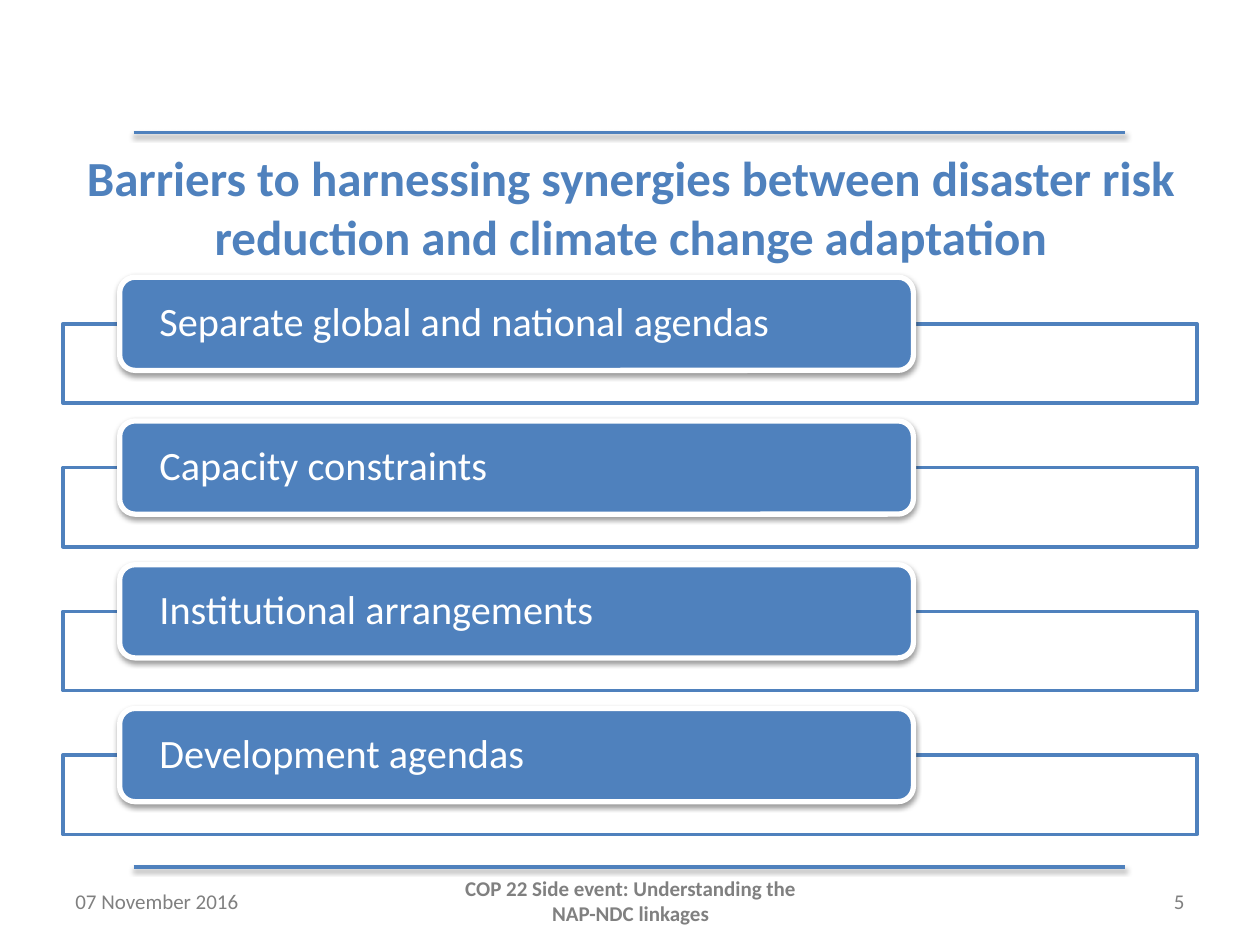
from dataclasses import dataclass

from lxml import etree
from pptx import Presentation
from pptx.dml.color import RGBColor
from pptx.enum.shapes import MSO_CONNECTOR, MSO_SHAPE
from pptx.enum.text import MSO_ANCHOR, PP_ALIGN
from pptx.oxml.ns import qn
from pptx.util import Inches, Pt

LEFT, CENTER, RIGHT = PP_ALIGN.LEFT, PP_ALIGN.CENTER, PP_ALIGN.RIGHT
MIDDLE = MSO_ANCHOR.MIDDLE
RECT, ROUNDED = MSO_SHAPE.RECTANGLE, MSO_SHAPE.ROUNDED_RECTANGLE
STRAIGHT = MSO_CONNECTOR.STRAIGHT


@dataclass(frozen=True)
class Theme:
    font: str = "Calibri"
    accent: str = "4F81BD"
    paper: str = "FFFFFF"
    muted: str = "808080"
    number: str = "7F7F7F"
    shadow: str = "000000"
    title_size: float = 28
    label_size: float = 23
    footer_size: float = 12
    rule_width: float = 2
    pill_border: float = 3


class Board:
    """Draws on one slide, measured in a grid of 100 columns by 75 rows."""

    def __init__(self, slide, width, height, theme):
        self.slide, self.theme = slide, theme
        self.col, self.row = width / 100, height / 75

    def place(self, *cells):
        units = (self.col, self.row) * 2
        return [round(cell * unit) for cell, unit in zip(cells, units)]

    def cast_shadow(self, shape):
        """Give the shape a soft shadow that falls straight down."""
        properties = shape._element.spPr
        effects = properties.find(qn("a:effectLst"))
        if effects is None:
            effects = etree.SubElement(properties, qn("a:effectLst"))
        shadow = etree.SubElement(
            effects, qn("a:outerShdw"), blurRad=str(Pt(3.1)), dist=str(Pt(1.6)),
            dir="5400000", rotWithShape="0")
        color = etree.SubElement(shadow, qn("a:srgbClr"), val=self.theme.shadow)
        etree.SubElement(color, qn("a:alpha"), val="38000")

    def rule(self, left, right, row):
        line = self.slide.shapes.add_connector(
            STRAIGHT, *self.place(left, row, right, row))
        line.line.color.rgb = RGBColor.from_string(self.theme.accent)
        line.line.width = Pt(self.theme.rule_width)
        self.cast_shadow(line)

    def box(self, kind, cells, fill, border, width):
        shape = self.slide.shapes.add_shape(kind, *self.place(*cells))
        shape.shadow.inherit = False
        shape.fill.solid()
        shape.fill.fore_color.rgb = RGBColor.from_string(fill)
        shape.line.color.rgb = RGBColor.from_string(border)
        shape.line.width = Pt(width)
        return shape

    def frame(self, *cells):
        theme = self.theme
        panel = self.box(RECT, cells, theme.paper, theme.accent, theme.rule_width)
        color = panel._element.spPr.find(qn("a:solidFill"))[0]
        etree.SubElement(color, qn("a:alpha"), val="90000")

    def pill(self, words, *cells):
        theme = self.theme
        pill = self.box(ROUNDED, cells, theme.accent, theme.paper, theme.pill_border)
        self.cast_shadow(pill)
        margins = {"margin_left": Inches(0.28), "margin_right": Inches(0.28),
                   "margin_top": 0, "margin_bottom": 0}
        for name, value in margins.items():
            setattr(pill.text_frame, name, value)
        self.fill_text(pill, words, theme.label_size, theme.paper).line_spacing = 0.9

    def text(self, words, cells, size, color, align=LEFT, bold=False):
        label = self.slide.shapes.add_textbox(*self.place(*cells))
        self.fill_text(label, words, size, color, align, bold)

    def fill_text(self, shape, words, size, color, align=LEFT, bold=False):
        frame = shape.text_frame
        frame.word_wrap = True
        frame.vertical_anchor = MIDDLE
        paragraph = frame.paragraphs[0]
        paragraph.alignment = align
        run = paragraph.add_run()
        run.text = words
        style = {"name": self.theme.font, "size": Pt(size), "bold": bold}
        for name, value in style.items():
            setattr(run.font, name, value)
        run.font.color.rgb = RGBColor.from_string(color)
        return paragraph


def main():
    deck = Presentation()
    deck.slide_width, deck.slide_height = Inches(10), Inches(7.5)
    slide = deck.slides.add_slide(deck.slide_layouts[6])
    theme = Theme()
    board = Board(slide, deck.slide_width, deck.slide_height, theme)

    for row in (10.5, 68.8):
        board.rule(10.6, 89.3, row)
    board.text("Barriers to harnessing synergies between disaster risk "
               "reduction and climate change adaptation",
               (5, 12.3, 90.1, 8.1), theme.title_size, theme.accent, CENTER, True)

    barriers = ("Separate global and national agendas", "Capacity constraints",
                "Institutional arrangements", "Development agendas")
    first_row, pitch = 22, 11.41
    for index, barrier in enumerate(barriers):
        top = first_row + index * pitch
        board.frame(5, top + 3.7, 90, 6.3)
        board.pill(barrier, 9.5, top, 63, 7.4)

    footers = (
        ("07 November 2016", 5, 23.3, theme.muted, LEFT, False),
        ("COP 22 Side event: Understanding the NAP-NDC linkages",
         34.2, 31.7, theme.muted, CENTER, True),
        ("5", 71.7, 23.3, theme.number, RIGHT, False),
    )
    for words, left, width, color, align, bold in footers:
        board.text(words, (left, 69.5, width, 4), theme.footer_size,
                   color, align, bold)

    deck.save("out.pptx")


if __name__ == "__main__":
    main()
